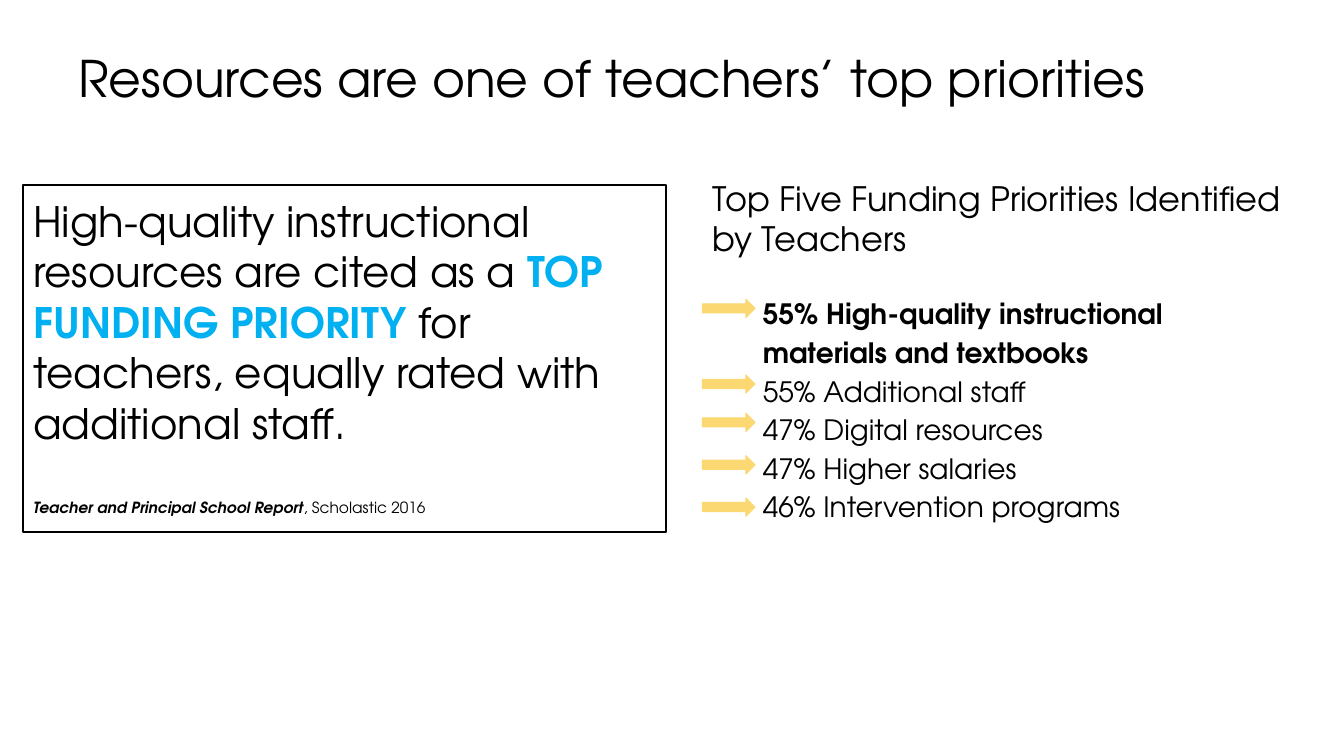
from pptx import Presentation
from pptx.dml.color import RGBColor
from pptx.enum import shapes, text
from pptx.util import Pt

FONT = "TeX Gyre Adventor"
BLACK, BLUE, YELLOW = "000000", "00B0F0", "FBD872"

PRIORITIES = [
    "55% High-quality instructional materials and textbooks",
    "55% Additional staff",
    "47% Digital resources",
    "47% Higher salaries",
    "46% Intervention programs",
]
ARROW_OFFSETS = [94.3, 148.3, 175.7, 206, 236.2]


def color(hex_string):
    return RGBColor.from_string(hex_string)


def style_font(font, size, hex_color=BLACK, bold=False, italic=False):
    font.name, font.size = FONT, Pt(size)
    font.bold, font.italic = bold, italic
    font.color.rgb = color(hex_color)


def prepare_frame(shape, insets=(7.2, 7.2, 7.2, 7.2), anchor=text.MSO_ANCHOR.TOP):
    frame = shape.text_frame
    frame.word_wrap = True
    frame.vertical_anchor = anchor
    (frame.margin_left, frame.margin_top,
     frame.margin_right, frame.margin_bottom) = map(Pt, insets)
    return frame


def add_title(slide, left, top, width, height):
    shape = slide.shapes.add_textbox(Pt(left), Pt(top), Pt(width), Pt(height))
    frame = prepare_frame(shape, (0, 0, 0, 7.2), text.MSO_ANCHOR.MIDDLE)
    paragraph = frame.paragraphs[0]
    paragraph.text = "Resources are one of teachers’ top priorities"
    paragraph.line_spacing = 0.9
    style_font(paragraph.font, 36)


def add_priorities(slide, left, top, width, height):
    # Heading and list
    shape = slide.shapes.add_textbox(Pt(left), Pt(top), Pt(width), Pt(height))
    frame = prepare_frame(shape)
    heading = frame.paragraphs[0]
    heading.text = "Top Five Funding Priorities Identified by Teachers"
    style_font(heading.font, 24)
    for index, priority in enumerate(PRIORITIES):
        paragraph = frame.add_paragraph()
        paragraph.text = priority
        paragraph.line_spacing = 1.15
        paragraph.space_before = Pt(0 if index else 24)
        properties = paragraph._p.get_or_add_pPr()
        properties.set("marL", str(Pt(36)))
        properties.set("indent", "0")
        style_font(paragraph.font, 20, bold=index == 0)

    # One arrow per priority
    for offset in ARROW_OFFSETS:
        arrow = slide.shapes.add_shape(
            shapes.MSO_SHAPE.RIGHT_ARROW, Pt(left), Pt(top + offset), Pt(37.5), Pt(13))
        arrow.shadow.inherit = False
        arrow.fill.solid()
        arrow.fill.fore_color.rgb = color(YELLOW)
        arrow.line.color.rgb = color(YELLOW)
        arrow.line.width = Pt(0.75)


def add_quote(slide, left, top, width, height):
    # Frame
    shape = slide.shapes.add_shape(
        shapes.MSO_SHAPE.RECTANGLE, Pt(left), Pt(top), Pt(width), Pt(height))
    shape.shadow.inherit = False
    shape.fill.background()
    shape.line.color.rgb = color(BLACK)
    shape.line.width = Pt(1.5)

    # Statement and citation, as (text, size, color, bold, italic) runs
    paragraphs = [
        [("High-quality instructional resources are cited as a ", 30, BLACK, False, False),
         ("TOP FUNDING PRIORITY ", 30, BLUE, True, False),
         ("for teachers, equally rated with", 30, BLACK, False, False)],
        [("additional staff.", 30, BLACK, False, False)],
        [("Teacher and Principal School Report", 11, BLACK, True, True),
         (", Scholastic 2016", 11, BLACK, False, False)],
    ]
    frame = prepare_frame(shape)
    for index, runs in enumerate(paragraphs):
        paragraph = frame.add_paragraph() if index else frame.paragraphs[0]
        paragraph.alignment = text.PP_ALIGN.LEFT
        for words, *style in runs:
            run = paragraph.add_run()
            run.text = words
            style_font(run.font, *style)
    frame.paragraphs[-1].space_before = Pt(36)


def main():
    presentation = Presentation()
    presentation.slide_width, presentation.slide_height = Pt(960), Pt(540)
    slide = presentation.slides.add_slide(presentation.slide_layouts[6])
    add_title(slide, 56, 31.7, 891, 59.8)
    add_priorities(slide, 501.8, 119.5, 425.5, 306)
    add_quote(slide, 16.6, 132.5, 459.4, 247.7)
    presentation.save("out.pptx")


if __name__ == "__main__":
    main()
